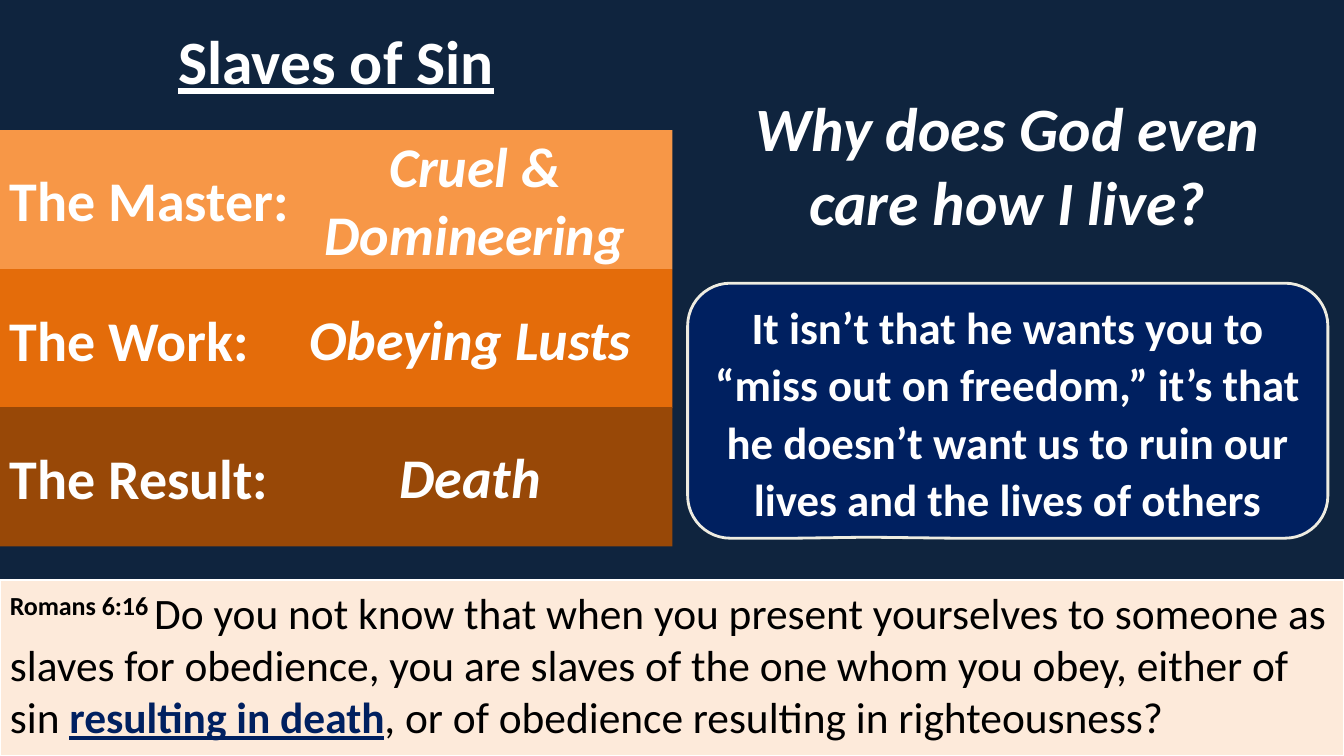
from dataclasses import dataclass, field
from typing import Any, Optional

import pptx
import pptx.dml.color
import pptx.enum.shapes
import pptx.enum.text
import pptx.util

PX = 9144
FORM = pptx.enum.shapes.MSO_SHAPE
ALIGN = pptx.enum.text.PP_ALIGN
MID = pptx.enum.text.MSO_ANCHOR.MIDDLE
TOP = pptx.enum.text.MSO_ANCHOR.TOP
BEND = (-0.219, 0.496, 0.167)


@dataclass(frozen=True)
class Theme:
    font: str = "Calibri"
    back: str = "0F243E"
    white: str = "FFFFFF"
    black: str = "000000"
    navy: str = "002060"
    cream: str = "FDEADA"
    edge: str = "EEECE1"
    head: int = 44
    row: int = 40
    note: int = 32
    verse: int = 31


THEME = Theme()


@dataclass(frozen=True)
class Run:
    text: str
    size: int
    color: str = THEME.white
    form: dict[str, Any] = field(default_factory=lambda: {"bold": True})
    lift: int = 0


@dataclass(frozen=True)
class Box:
    area: tuple[int, int, int, int]
    runs: list[Run]
    kind: Optional[FORM] = None
    fill: Optional[str] = None
    line: Optional[tuple[str, float]] = None
    bends: tuple[float, ...] = ()
    align: ALIGN = ALIGN.CENTER
    anchor: pptx.enum.text.MSO_ANCHOR = MID
    space: float = 1.0


@dataclass(frozen=True)
class Row:
    label: str
    value: str
    fill: str


ROWS = [
    Row("The Master:", "Cruel & Domineering", "F79747"),
    Row("The Work:", "Obeying Lusts", "E46C0A"),
    Row("The Result:", "Death", "984807"),
]
SLANT = {"bold": True, "italic": True}
UNDER = {"bold": True, "underline": True}
PLAIN = {"bold": False}

TITLE = Box((0, 18, 667, 108), [Run("Slaves of Sin", THEME.head, form=UNDER)], anchor=TOP)
VERSE = Box(
    (0, 575, 1333, 175),
    [
        Run("Romans 6:16 ", THEME.note, THEME.black, lift=30000),
        Run(
            "Do you not know that when you present yourselves to someone "
            "as slaves for obedience, you are slaves of the one whom you obey, "
            "either of sin ",
            THEME.verse, THEME.black, PLAIN,
        ),
        Run("resulting in death", THEME.verse, THEME.navy, UNDER),
        Run(", or of obedience resulting in righteousness?", THEME.verse, THEME.black, PLAIN),
    ],
    FORM.RECTANGLE, THEME.cream, (THEME.white, 1.5), align=ALIGN.LEFT, anchor=TOP,
)
ASK = Box(
    (708, 67, 583, 192),
    [Run("Why does God even care how I live?", THEME.head, form=SLANT)],
    FORM.ROUNDED_RECTANGULAR_CALLOUT, bends=BEND,
)
REPLY = Box(
    (682, 281, 635, 253),
    [Run(
        "It isn’t that he wants you to “miss out on freedom,” it’s that "
        "he doesn’t want us to ruin our lives and the lives of others",
        THEME.note,
    )],
    FORM.ROUNDED_RECTANGULAR_CALLOUT, THEME.navy, (THEME.edge, 2), BEND, space=1.07,
)


def tint(code: str) -> pptx.dml.color.RGBColor:
    return pptx.dml.color.RGBColor.from_string(code)


def apply(item: Any, form: dict[str, Any]) -> None:
    for name, value in form.items():
        setattr(item, name, value)


def write(shape: Any, box: Box) -> None:
    frame = shape.text_frame
    apply(frame, {
        "word_wrap": True,
        "auto_size": pptx.enum.text.MSO_AUTO_SIZE.NONE,
        "vertical_anchor": box.anchor,
    })
    para = frame.paragraphs[0]
    apply(para, {"alignment": box.align, "line_spacing": box.space})
    for part in box.runs:
        run = para.add_run()
        run.text = part.text
        apply(run.font, {"name": THEME.font, "size": pptx.util.Pt(part.size), **part.form})
        run.font.color.rgb = tint(part.color)
        if part.lift:
            run.font._element.set("baseline", str(part.lift))


def style(shape: Any, box: Box) -> None:
    shape.shadow.inherit = False
    for spot, bend in enumerate(box.bends):
        shape.adjustments[spot] = bend
    if box.fill:
        shape.fill.solid()
        shape.fill.fore_color.rgb = tint(box.fill)
    else:
        shape.fill.background()
    if box.line:
        color, width = box.line
        shape.line.color.rgb = tint(color)
        shape.line.width = pptx.util.Pt(width)
    else:
        shape.line.fill.background()


def draw(slide: Any, box: Box) -> None:
    area = [side * PX for side in box.area]
    if box.kind is None:
        shape = slide.shapes.add_textbox(*area)
    else:
        shape = slide.shapes.add_shape(box.kind, *area)
        style(shape, box)
    write(shape, box)


def head(slide: Any, box: Box) -> None:
    title = slide.shapes.title
    sides = ("left", "top", "width", "height")
    apply(title, {name: side * PX for name, side in zip(sides, box.area)})
    write(title, box)


def bands(rows: list[Row]) -> list[Box]:
    boxes: list[Box] = []
    for spot, row in enumerate(rows):
        top = 129 + round(spot * 137.5)
        left = 292 if spot == 0 else 283
        boxes.append(Box(
            (0, top, 667, 138), [Run(row.label, THEME.row)],
            FORM.RECTANGLE, row.fill, align=ALIGN.LEFT,
        ))
        boxes.append(Box(
            (left, top + 4, 650 - left, 129), [Run(row.value, THEME.row, form=SLANT)],
        ))
    return boxes


def main() -> None:
    deck = pptx.Presentation()
    apply(deck, {"slide_width": 1333 * PX, "slide_height": 750 * PX})
    slide = deck.slides.add_slide(deck.slide_layouts[5])
    slide.background.fill.solid()
    slide.background.fill.fore_color.rgb = tint(THEME.back)
    head(slide, TITLE)
    for box in [*bands(ROWS), VERSE, ASK, REPLY]:
        draw(slide, box)
    deck.save("out.pptx")


if __name__ == "__main__":
    main()
